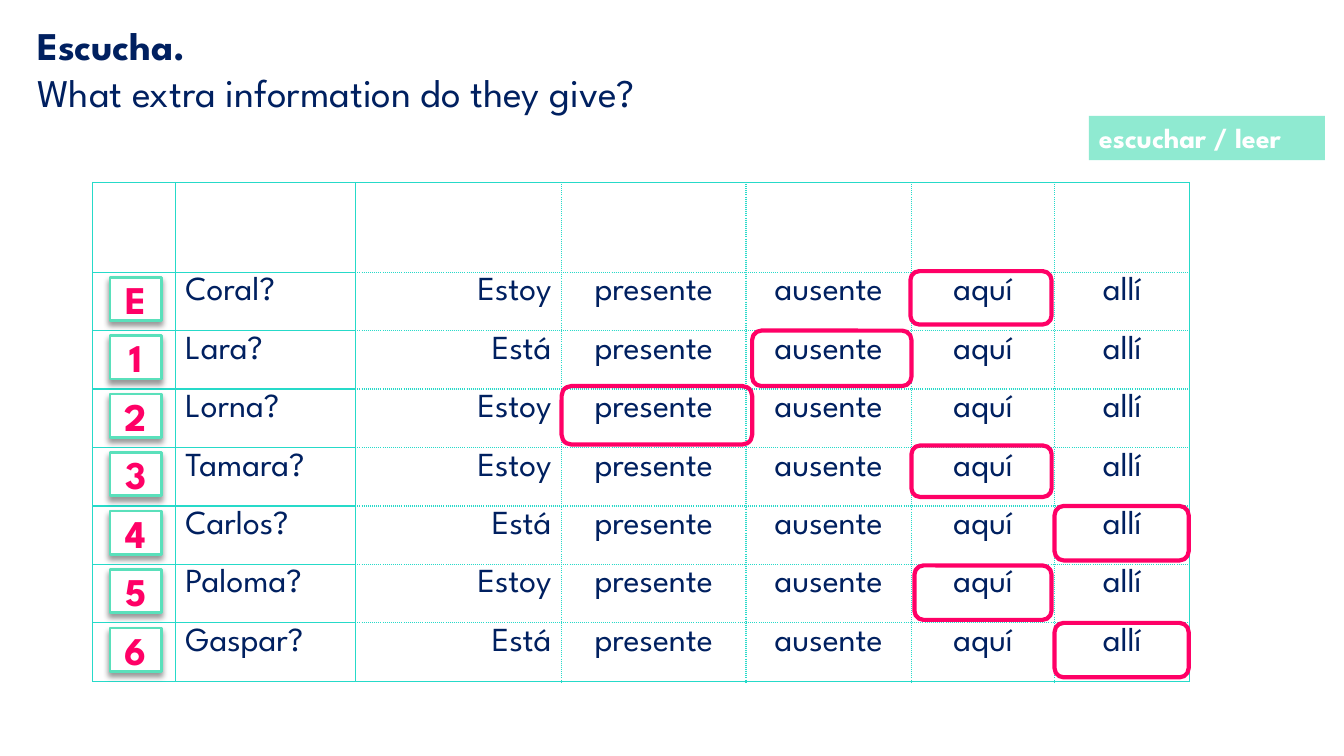
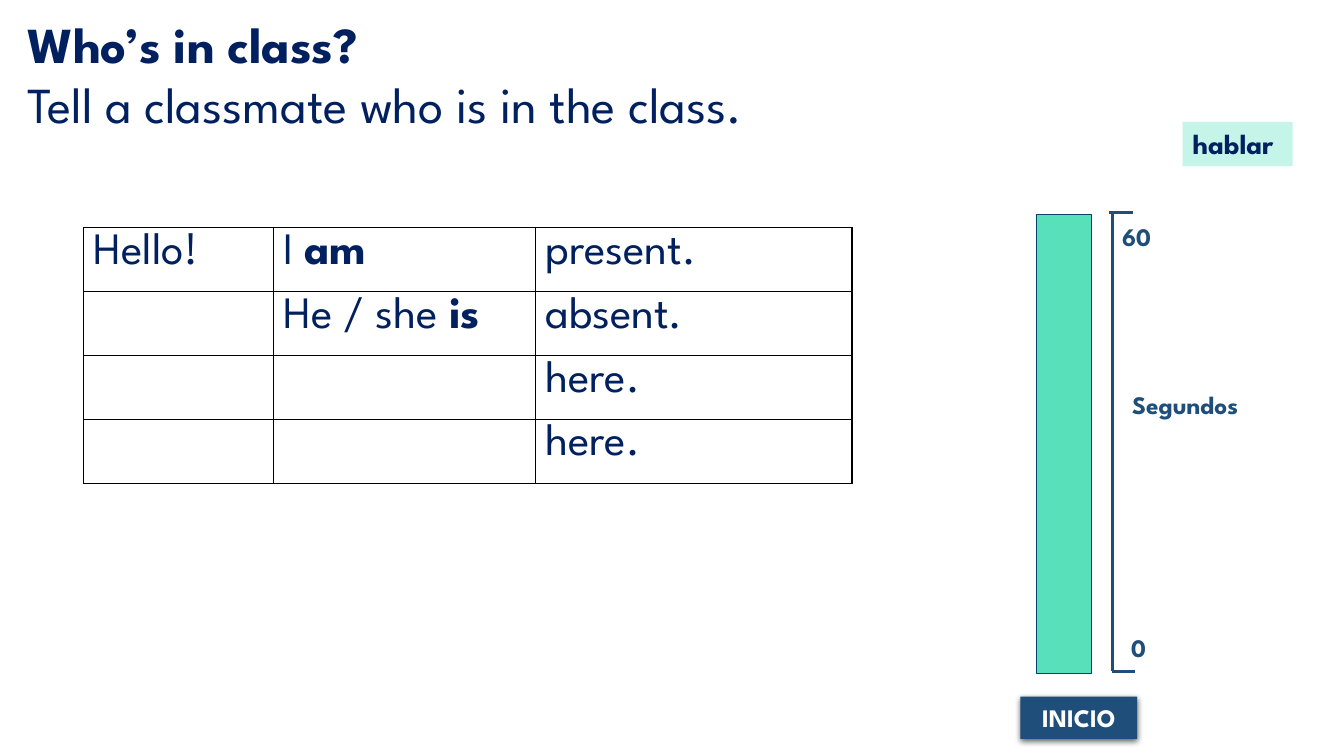
from lxml import etree
from pptx import Presentation
from pptx.dml.color import RGBColor
from pptx.enum.shapes import MSO_CONNECTOR, MSO_SHAPE
from pptx.enum.text import MSO_ANCHOR, PP_ALIGN
from pptx.oxml import parse_xml
from pptx.oxml.ns import nsdecls, qn
from pptx.util import Inches, Pt

LEFT, MID, RIGHT = PP_ALIGN.LEFT, PP_ALIGN.CENTER, PP_ALIGN.RIGHT
TOP, MIDDLE = MSO_ANCHOR.TOP, MSO_ANCHOR.MIDDLE
RECT, ROUND = MSO_SHAPE.RECTANGLE, MSO_SHAPE.ROUNDED_RECTANGLE
BUTTON = MSO_SHAPE.ACTION_BUTTON_CUSTOM
STRAIGHT = MSO_CONNECTOR.STRAIGHT

FONT = "League Spartan"
COLORS = {
    "navy": "002060", "white": "FFFFFF", "black": "000000", "pink": "FF0066",
    "teal": "26DAC9", "mint": "8FEAD1", "pale": "C5F5E8", "edge": "5AE0BB",
    "bar": "58E0BA", "rim": "02456F", "blue": "1E4E79",
}

LISTEN = ("Escucha.", "What extra information do they give?")
WORDS = ["presente", "ausente", "aquí", "allí"]
PEOPLE = [
    ("E", "Coral?", "Estoy", (9.03, 2.69, 1.4, 0.53)),
    ("1", "Lara?", "Está", (7.46, 3.28, 1.58, 0.55)),
    ("2", "Lorna?", "Estoy", (5.57, 3.83, 1.89, 0.58)),
    ("3", "Tamara?", "Estoy", (9.04, 4.42, 1.39, 0.51)),
    ("4", "Carlos?", "Está", (10.46, 5.02, 1.33, 0.54)),
    ("5", "Paloma?", "Estoy", (9.07, 5.61, 1.36, 0.54)),
    ("6", "Gaspar?", "Está", (10.46, 6.18, 1.33, 0.54)),
]
GRID_COLS = [0.82, 1.79, 2.04, 1.83, 1.64, 1.42, 1.34]
HEAD, STEP = 0.89, 0.58
GRID_ALIGN = [LEFT, LEFT, RIGHT] + [MID] * len(WORDS)

SPEAK = ("Who’s in class?", "Tell a classmate who is in the class.")
PHRASES = [
    [[("Hello!", False)], [("I ", False), ("am", True)], [("present.", False)]],
    [[], [("He / she ", False), ("is", True)], [("absent.", False)]],
    [[], [], [("here.", False)]],
    [[], [], [("here.", False)]],
]
PHRASE_COLS = [1.88, 2.6, 3.14]
LABELS = [
    ("Segundos", (10.97, 3.81, 1.57, 0.4), MID),
    ("60", (11.03, 2.15, 1.05, 0.4), LEFT),
    ("0", (11.12, 6.22, 0.95, 0.4), LEFT),
]
SCALE = [(11.03, 2.11, 11.03, 6.66), (11, 2.11, 11.24, 2.11),
         (11.03, 6.66, 11.26, 6.66)]


def rgb(name):
    return RGBColor.from_string(COLORS[name])


def style(para, size, color, bold=None, align=LEFT):
    para.alignment = align
    font = para.font
    font.name, font.size, font.bold = FONT, Pt(size), bold
    font.color.rgb = rgb(color)


def put_text(slide, box, lines, size, color, align=LEFT):
    frame = slide.shapes.add_textbox(*map(Inches, box)).text_frame
    frame.word_wrap = True
    for i, (text, bold) in enumerate(lines):
        para = frame.add_paragraph() if i else frame.paragraphs[0]
        para.text = text
        style(para, size, color, bold, align)


def put_title(slide, box, lines, size):
    head, task = lines
    put_text(slide, box, [(head, True), (task, False)], size, "navy")


def put_shape(slide, kind, box, fill=None, line=None, width=1, shade=None):
    shape = slide.shapes.add_shape(kind, *map(Inches, box))
    shape.shadow.inherit = False
    if fill:
        shape.fill.solid()
        shape.fill.fore_color.rgb = rgb(fill)
    else:
        shape.fill.background()
    if line:
        shape.line.color.rgb = rgb(line)
        shape.line.width = Pt(width)
    else:
        shape.line.fill.background()
    if shade:
        alpha, blur, dist = shade
        effects = shape._element.spPr.find(qn("a:effectLst"))
        effects.append(parse_xml(
            f'<a:outerShdw {nsdecls("a")} blurRad="{Pt(blur)}" '
            f'dist="{Pt(dist)}" dir="5400000" algn="t" rotWithShape="0">'
            f'<a:srgbClr val="{COLORS["black"]}">'
            f'<a:alpha val="{alpha * 1000}"/></a:srgbClr></a:outerShdw>'))
    return shape


def label(shape, text, size, color, align=MID, anchor=MIDDLE):
    frame = shape.text_frame
    frame.word_wrap = True
    frame.vertical_anchor = anchor
    para = frame.paragraphs[0]
    para.text = text
    style(para, size, color, True, align)


def put_tag(slide, box, text, fill, color):
    label(put_shape(slide, RECT, box, fill), text, 20, color, LEFT, TOP)


def put_line(slide, ends, color, width):
    line = slide.shapes.add_connector(STRAIGHT, *map(Inches, ends))
    line.line.color.rgb = rgb(color)
    line.line.width = Pt(width)
    etree.SubElement(line._element.spPr, qn("a:effectLst"))


def edge(cell, side, color, dash):
    cell._tc.get_or_add_tcPr().append(parse_xml(
        f'<a:ln{side} {nsdecls("a")} w="{Pt(1)}"><a:solidFill>'
        f'<a:srgbClr val="{COLORS[color]}"/></a:solidFill>'
        f'<a:prstDash val="{dash}"/></a:ln{side}>'))


def put_table(slide, spot, cols, heights, rows, aligns, size, color, dash):
    box = (*spot, sum(cols), sum(heights))
    table = slide.shapes.add_table(
        len(rows), len(cols), *map(Inches, box)).table
    table.first_row = table.horz_banding = False
    for col, width in zip(table.columns, cols):
        col.width = Inches(width)
    for row, height in zip(table.rows, heights):
        row.height = Inches(height)
    for r, row in enumerate(rows):
        for c, runs in enumerate(row):
            cell = table.cell(r, c)
            for side, kind in zip("LRTB", dash(r, c)):
                edge(cell, side, color, kind)
            cell.fill.background()
            para = cell.text_frame.paragraphs[0]
            for text, bold in runs:
                run = para.add_run()
                run.text = text
                if bold:
                    run.font.bold = True
            style(para, size, "navy", align=aligns[c])


def grid_dash(r, c):
    last = len(PEOPLE)
    solid = (c <= 2, c < 2 or c == len(GRID_COLS) - 1,
             c < 2 or r == 0, c < 2 or r == last)
    return ["solid" if on else "dot" for on in solid]


def plain_dash(r, c):
    return ["solid"] * 4


def listen(slide):
    rows = [[[] for _ in GRID_COLS]]
    for _, name, verb, _ in PEOPLE:
        rows.append([[]] + [[(t, False)] for t in (name, verb, *WORDS)])
    heights = [HEAD] + [STEP] * len(PEOPLE)
    put_table(slide, (0.92, 1.81), GRID_COLS, heights, rows, GRID_ALIGN,
              24, "teal", grid_dash)
    for *_, ring in PEOPLE:
        put_shape(slide, ROUND, ring, line="pink", width=3)
    put_title(slide, (0.27, 0.16, 9.15, 1.04), LISTEN, 28)
    put_tag(slide, (10.8, 1.15, 2.34, 0.44), "escuchar / leer", "mint", "white")
    for i, (mark, *_) in enumerate(PEOPLE):
        box = (1.09, 2.75 + i * STEP, 0.51, 0.43)
        badge = put_shape(slide, BUTTON, box, "white", "edge", 2, (40, 4, 3))
        label(badge, mark, 28, "pink")


def speak(slide):
    put_title(slide, (0.17, 0.08, 8.64, 1.31), SPEAK, 36)
    put_table(slide, (0.83, 2.26), PHRASE_COLS, [0.63] * len(PHRASES), PHRASES,
              [LEFT] * 3, 32, "black", plain_dash)
    put_tag(slide, (11.73, 1.21, 1.09, 0.44), "hablar", "pale", "navy")
    put_shape(slide, RECT, (10.28, 2.13, 0.55, 4.55), "bar", "rim", 0.75)
    for ends in SCALE:
        put_line(slide, ends, "blue", 2.25)
    for text, box, align in LABELS:
        put_text(slide, box, [(text, True)], 18, "blue", align)
    start = put_shape(slide, RECT, (10.12, 6.91, 1.16, 0.42), "blue",
                      shade=(63, 4.5, 1.5))
    label(start, "INICIO", 18, "white")


def main():
    deck = Presentation()
    deck.slide_width, deck.slide_height = Inches(13.33), Inches(7.5)
    for build in (listen, speak):
        build(deck.slides.add_slide(deck.slide_layouts[6]))
    deck.save("out.pptx")


if __name__ == "__main__":
    main()
